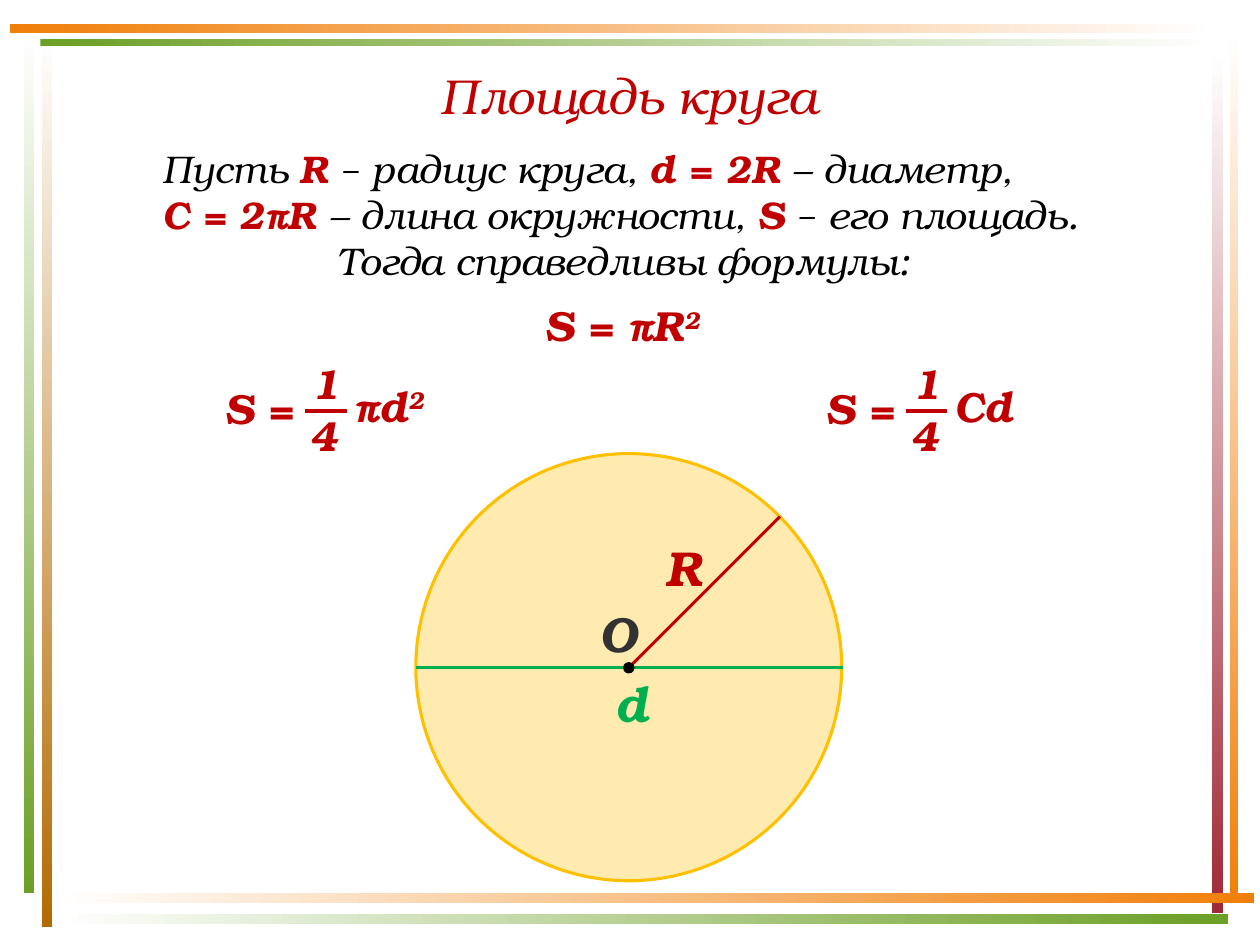
from lxml.etree import SubElement
from pptx import Presentation
from pptx.dml.color import RGBColor
from pptx.enum.shapes import MSO_CONNECTOR, MSO_SHAPE
from pptx.enum.text import MSO_ANCHOR, MSO_AUTO_SIZE, PP_ALIGN
from pptx.oxml.ns import qn
from pptx.util import Pt

PX = 9144
FONT = "TeX Gyre Bonum"
SYMBOL_FONT = "Cambria"
DOWN, RIGHTWARD = 270, 0

COLORS = {
    "white": "FFFFFF",
    "black": "000000",
    "gray": "323232",
    "red": "C00000",
    "green": "00B050",
    "yellow": "FFC000",
    "frame_brown": "B26B02",
    "frame_green": "6B9F25",
    "frame_orange": "F07F09",
    "frame_red": "9F2936",
}

FRAME_BARS = [
    (33, 28, 8, 708, "white", "frame_brown", DOWN),
    (19, 25, 8, 684, "white", "frame_green", DOWN),
    (976, 24, 7, 693, "white", "frame_orange", DOWN),
    (962, 42, 9, 683, "white", "frame_red", DOWN),
    (45, 709, 950, 8, "white", "frame_orange", RIGHTWARD),
    (45, 725, 930, 8, "white", "frame_green", RIGHTWARD),
    (32, 31, 932, 6, "frame_green", "white", RIGHTWARD),
    (8, 19, 956, 7, "frame_orange", "white", RIGHTWARD),
]


def px(*lengths):
    return [length * PX for length in lengths]


def rgb(name):
    return RGBColor.from_string(COLORS[name])


def add_run(paragraph, text, size, color, bold=True, font=FONT, superscript=False):
    run = paragraph.add_run()
    run.text = text
    run.font.name = font
    run.font.size = Pt(size)
    run.font.bold = bold
    run.font.italic = True
    run.font.color.rgb = rgb(color)
    if superscript:
        run.font._element.set("baseline", "30000")


def add_text_box(shapes, box, wrap=False):
    frame = shapes.add_textbox(*px(*box)).text_frame
    frame.word_wrap = wrap
    frame.auto_size = MSO_AUTO_SIZE.SHAPE_TO_FIT_TEXT
    return frame


def add_label(shapes, box, text, size=24, color="red", exponent="", wrap=False):
    paragraph = add_text_box(shapes, box, wrap).paragraphs[0]
    add_run(paragraph, text, size, color)
    if exponent:
        add_run(paragraph, exponent, size, color, superscript=True)


def add_line(shapes, start, end, color, width=1.75):
    line = shapes.add_connector(MSO_CONNECTOR.STRAIGHT, *px(*start, *end))
    line.line.color.rgb = rgb(color)
    line.line.width = Pt(width)
    SubElement(line._element.spPr, qn("a:effectLst"))


def add_frame_bar(shapes, left, top, width, height, first, last, angle):
    bar = shapes.add_shape(MSO_SHAPE.RECTANGLE, *px(left, top, width, height))
    bar.shadow.inherit = False
    bar.line.fill.background()
    bar.fill.gradient()
    bar.fill.gradient_angle = angle
    for stop, color, position in zip(bar.fill.gradient_stops, (first, last), (0, 1)):
        stop.color.rgb = rgb(color)
        stop.position = position


def add_ellipse(shapes, box, color, line_width, opacity=100):
    ellipse = shapes.add_shape(MSO_SHAPE.OVAL, *px(*box))
    ellipse.shadow.inherit = False
    ellipse.fill.solid()
    ellipse.fill.fore_color.rgb = rgb(color)
    ellipse.line.color.rgb = rgb(color)
    ellipse.line.width = Pt(line_width)
    if opacity < 100:
        fill_color = ellipse._element.spPr.find(qn("a:solidFill"))[0]
        SubElement(fill_color, qn("a:alpha"), val=str(opacity * 1000))


def add_quarter_formula(slide, left, product, product_width, exponent=""):
    shapes = slide.shapes.add_group_shape().shapes
    add_label(shapes, (left + 103, 297, product_width, 50), product, exponent=exponent)
    add_label(shapes, (left + 68, 320, 43, 50), "4")
    add_label(shapes, (left + 70, 279, 43, 50), "1")
    add_label(shapes, (left, 299, 189, 50), "S =", wrap=True)
    add_line(shapes, (left + 74, 326), (left + 107, 326), "red", 2.25)


def add_title(slide, text):
    title = slide.shapes.title
    title.left, title.top, title.width, title.height = px(62, 44, 875, 62)
    title.text_frame.vertical_anchor = MSO_ANCHOR.MIDDLE
    paragraph = title.text_frame.paragraphs[0]
    paragraph.alignment = PP_ALIGN.CENTER
    add_run(paragraph, text, 28, "red", bold=False)


def add_definitions(shapes):
    frame = add_text_box(shapes, (119, 110, 761, 121), wrap=True)
    definitions = frame.paragraphs[0]
    definitions.alignment = PP_ALIGN.LEFT

    def plain(text, font=FONT):
        add_run(definitions, text, 22, "black", bold=False, font=font)

    def symbol(text):
        add_run(definitions, text, 22, "red")

    plain("Пусть ")
    symbol("R ")
    plain("−", SYMBOL_FONT)
    plain(" радиус круга, ")
    symbol("d = 2R ")
    plain("– диаметр,")
    definitions.add_line_break()
    symbol("С = 2πR ")
    plain("– длина окружности, ")
    symbol("S ")
    plain("−", SYMBOL_FONT)
    plain(" его площадь.")

    conclusion = frame.add_paragraph()
    conclusion.alignment = PP_ALIGN.CENTER
    add_run(conclusion, "Тогда справедливы формулы: ", 22, "black", bold=False)


def add_circle_drawing(shapes):
    add_ellipse(shapes, (330, 360, 338, 339), "yellow", 1.75, opacity=31)
    add_line(shapes, (330, 530), (669, 530), "green")
    add_line(shapes, (499, 530), (619, 410), "red")
    add_label(shapes, (518, 422, 49, 57), "R", 28)
    add_label(shapes, (479, 530, 47, 57), "d", 28, "green")
    add_ellipse(shapes, (495, 526, 8, 8), "black", 0.75)
    add_label(shapes, (466, 474, 50, 57), "О", 28, "gray")


def main():
    presentation = Presentation()
    presentation.slide_width, presentation.slide_height = px(1000, 750)
    slide = presentation.slides.add_slide(presentation.slide_layouts[5])
    for bar in FRAME_BARS:
        add_frame_bar(slide.shapes, *bar)
    add_title(slide, "Площадь круга")
    add_definitions(slide.shapes)
    add_label(slide.shapes, (422, 233, 156, 50), "S = πR", exponent="2", wrap=True)
    add_quarter_formula(slide, 168, "πd", 83, exponent="2")
    add_quarter_formula(slide, 645, "Сd", 67)
    add_circle_drawing(slide.shapes)
    presentation.save("out.pptx")


if __name__ == "__main__":
    main()
